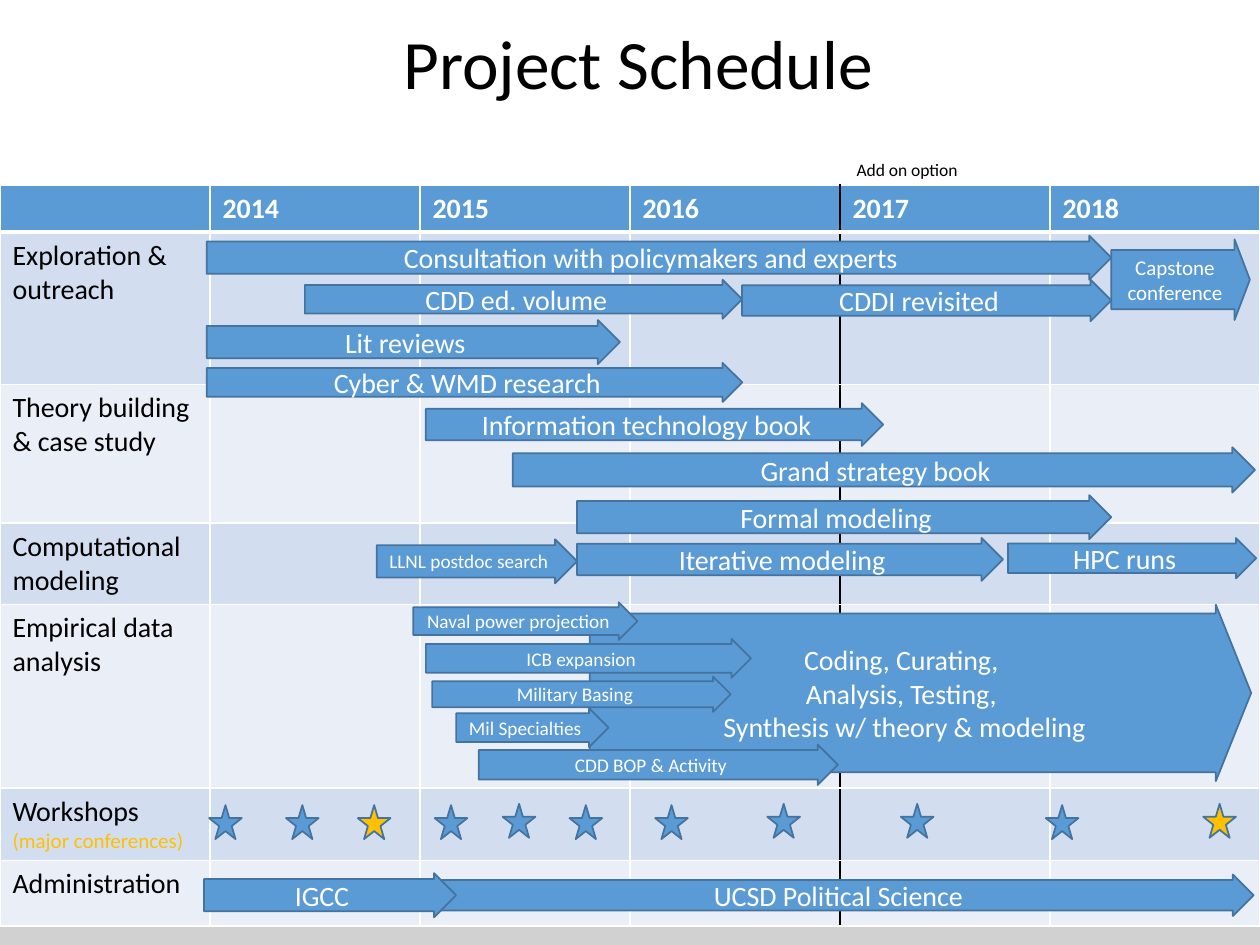
import copy
import lxml.etree
import pptx
import pptx.dml.color
import pptx.enum.shapes
import pptx.enum.text
import pptx.oxml
import pptx.oxml.ns
import pptx.util

Inches = pptx.util.Inches
SHAPES = pptx.enum.shapes.MSO_SHAPE
ALIGN = pptx.enum.text.PP_ALIGN
ANCHOR = pptx.enum.text.MSO_ANCHOR

COLORS = {
    "blue": "5B9BD5", "outline": "43739E", "gold": "FFC000",
    "band_dark": "D2DEEF", "band_light": "EAEFF7",
    "white": "FFFFFF", "black": "000000",
}
BACKGROUND_STOPS = [(0, "FFFFFF"), (0.5, "FBFBFB"), (1, "D1D1D1")]
FONT = "Calibri"

# Schedule grid: years across, work streams down
YEARS = ["2014", "2015", "2016", "2017", "2018"]
STREAMS = [  # runs of (text, size, color), row height
    ([("Exploration & outreach", 16, "black")], 1.21),
    ([("Theory building & case study", 16, "black")], 1.1),
    ([("Computational modeling", 16, "black")], 0.61),
    ([("Empirical data analysis", 16, "black")], 1.46),
    ([("Workshops ", 16, "black"), ("(major conferences)", 12, "gold")], 0.52),
    ([("Administration", 16, "black")], 0.52),
]
HEADER_HEIGHT = 0.33
TABLE_TOP = 1.47
OPTION_COLUMN = 4  # a black rule marks the left edge of the add-on year

# Activities, back to front: text, size, left, top, width, height
SLIM, TIP = 0.734, 0.5
ACTIVITIES = [
    ("Coding, Curating, \vAnalysis, Testing, \vSynthesis w/ theory & modeling",
     16, 4.68, 4.8, 5.25, 1.4),
    ("CDD ed. volume", 16, 2.42, 2.22, 3.47, 0.31),
    ("Information technology book", 16, 3.38, 3.2, 3.63, 0.34),
    ("Grand strategy book", 16, 4.07, 3.55, 5.89, 0.36),
    ("ICB expansion", 11, 3.38, 5.07, 2.58, 0.31),
    ("Mil Specialties", 11, 3.62, 5.62, 1.21, 0.31),
    ("CDD BOP & Activity", 11, 3.8, 5.91, 2.85, 0.32),
    ("Naval power projection", 11, 3.28, 4.78, 1.78, 0.3),
    ("LLNL postdoc search", 11, 2.99, 4.28, 1.59, 0.35),
    ("CDDI revisited", 16, 5.89, 2.22, 2.93, 0.33),
    ("Capstone conference", 12, 8.82, 1.9, 1.1, 0.64),
    ("Consultation with policymakers and experts", 16, 1.64, 1.87, 7.18, 0.35),
    ("Lit reviews", 16, 1.64, 2.54, 3.28, 0.35),
    ("Formal modeling", 16, 4.58, 3.93, 4.24, 0.35),
    ("Cyber & WMD research", 16, 1.64, 2.88, 4.25, 0.31),
    ("Iterative modeling", 16, 4.58, 4.27, 3.38, 0.34),
    ("HPC runs", 16, 8, 4.27, 1.97, 0.32),
    ("UCSD Political Science", 16, 3.48, 6.94, 6.47, 0.33),
    ("IGCC", 16, 1.62, 6.93, 2, 0.35),
    ("Military Basing", 11, 3.43, 5.37, 2.37, 0.28),
]
SPECIAL_ARROWS = {ACTIVITIES[0][0]: (0.9, 0.2), "Capstone conference": (SLIM, 0.19)}

# Workshops: left, top, color
WORKSHOPS = [
    (1.66, 6.39, "blue"), (2.27, 6.39, "blue"), (2.84, 6.39, "gold"),
    (3.45, 6.39, "blue"), (3.99, 6.38, "blue"), (4.52, 6.39, "blue"),
    (5.2, 6.39, "blue"), (6.09, 6.38, "blue"), (7.15, 6.38, "blue"),
    (8.3, 6.39, "blue"), (9.55, 6.38, "gold"),
]


def rgb(name):
    return pptx.dml.color.RGBColor.from_string(COLORS[name])


def format_font(font, size, color, bold=False):
    values = {"name": FONT, "size": pptx.util.Pt(size), "bold": bold}
    for attribute, value in values.items():
        setattr(font, attribute, value)
    font.color.rgb = rgb(color)


def add_run(paragraph, text, size, color, bold=False):
    run = paragraph.add_run()
    run.text = text
    format_font(run.font, size, color, bold)


def set_background(slide):
    fill = slide.background.fill
    fill.gradient()
    stop_list = next(slide.element.iter(pptx.oxml.ns.qn("a:gsLst")))
    stop_list.append(copy.deepcopy(stop_list[0]))
    for stop, (position, color) in zip(fill.gradient_stops, BACKGROUND_STOPS):
        stop.position = position
        stop.color.rgb = pptx.dml.color.RGBColor.from_string(color)
    next(slide.element.iter(pptx.oxml.ns.qn("a:lin"))).set("ang", "5400000")


def set_borders(cell, borders):
    properties = cell._tc.get_or_add_tcPr()
    namespace = pptx.oxml.ns.nsdecls("a")
    for index, (side, (color, width)) in enumerate(borders.items()):
        properties.insert(index, pptx.oxml.parse_xml(
            f'<a:ln{side} {namespace} w="{pptx.util.Pt(width)}"><a:solidFill>'
            f'<a:srgbClr val="{COLORS[color]}"/></a:solidFill></a:ln{side}>'))


def add_schedule(slide):
    rows = [([], HEADER_HEIGHT)] + STREAMS
    columns = len(YEARS) + 1
    height = sum(row_height for _, row_height in rows)
    table = slide.shapes.add_table(
        len(rows), columns, 0, Inches(TABLE_TOP), Inches(10), Inches(height)).table
    for row, (label, row_height) in enumerate(rows):
        table.rows[row].height = Inches(row_height)
        fill = "blue" if row == 0 else ("band_light", "band_dark")[row % 2]
        for column in range(columns):
            cell = table.cell(row, column)
            cell.fill.solid()
            cell.fill.fore_color.rgb = rgb(fill)
            paragraph = cell.text_frame.paragraphs[0]
            if row == 0 and column > 0:
                add_run(paragraph, YEARS[column - 1], 16, "white", True)
            elif column == 0 and label:
                for run in label:
                    add_run(paragraph, *run)
            else:
                format_font(paragraph.font, 16, "black")
            set_borders(cell, {
                "L": ("black" if column == OPTION_COLUMN else "white", 1),
                "R": ("black" if column == OPTION_COLUMN - 1 else "white", 1),
                "T": ("white", 3 if row == 1 else 1),
                "B": ("white", 3 if row == 0 else 1),
            })


def add_marker(slide, kind, left, top, width, height, fill):
    shape = slide.shapes.add_shape(
        kind, Inches(left), Inches(top), Inches(width), Inches(height))
    shape.shadow.inherit = False
    shape.fill.solid()
    shape.fill.fore_color.rgb = rgb(fill)
    shape.line.color.rgb = rgb("outline")
    shape.line.width = pptx.util.Pt(1)
    return shape


def add_activity(slide, text, size, *place):
    shape = add_marker(slide, SHAPES.RIGHT_ARROW, *place, "blue")
    for index, value in enumerate(SPECIAL_ARROWS.get(text, (SLIM, TIP))):
        shape.adjustments[index] = value
    shape.text_frame.vertical_anchor = ANCHOR.MIDDLE
    paragraph = shape.text_frame.paragraphs[0]
    paragraph.alignment = ALIGN.CENTER
    paragraph.text = text
    for run in paragraph.runs:
        format_font(run.font, size, "white")


def main():
    presentation = pptx.Presentation()
    presentation.slide_width, presentation.slide_height = Inches(10), Inches(7.5)
    slide = presentation.slides.add_slide(presentation.slide_layouts[5])
    set_background(slide)

    # Title
    title = slide.shapes.title
    place = {"left": 1.98, "top": 0.15, "width": 6.17, "height": 0.76}
    for attribute, value in place.items():
        setattr(title, attribute, Inches(value))
    title.text_frame.vertical_anchor = ANCHOR.MIDDLE
    paragraph = title.text_frame.paragraphs[0]
    paragraph.alignment = ALIGN.CENTER
    paragraph.line_spacing = 0.9
    add_run(paragraph, "Project Schedule", 39.6, "black")

    # Schedule, activities and workshops
    add_schedule(slide)
    for activity in ACTIVITIES:
        add_activity(slide, *activity)
    for left, top, color in WORKSHOPS:
        add_marker(slide, SHAPES.STAR_5_POINT, left, top, 0.26, 0.27, color)

    # Label over the add-on year
    label = slide.shapes.add_textbox(Inches(6.7), Inches(1.21), Inches(1.01), Inches(0.27))
    label.text_frame.word_wrap = False
    label.text_frame.auto_size = pptx.enum.text.MSO_AUTO_SIZE.SHAPE_TO_FIT_TEXT
    add_run(label.text_frame.paragraphs[0], "Add on option", 10, "black")

    presentation.save("out.pptx")


if __name__ == "__main__":
    main()
